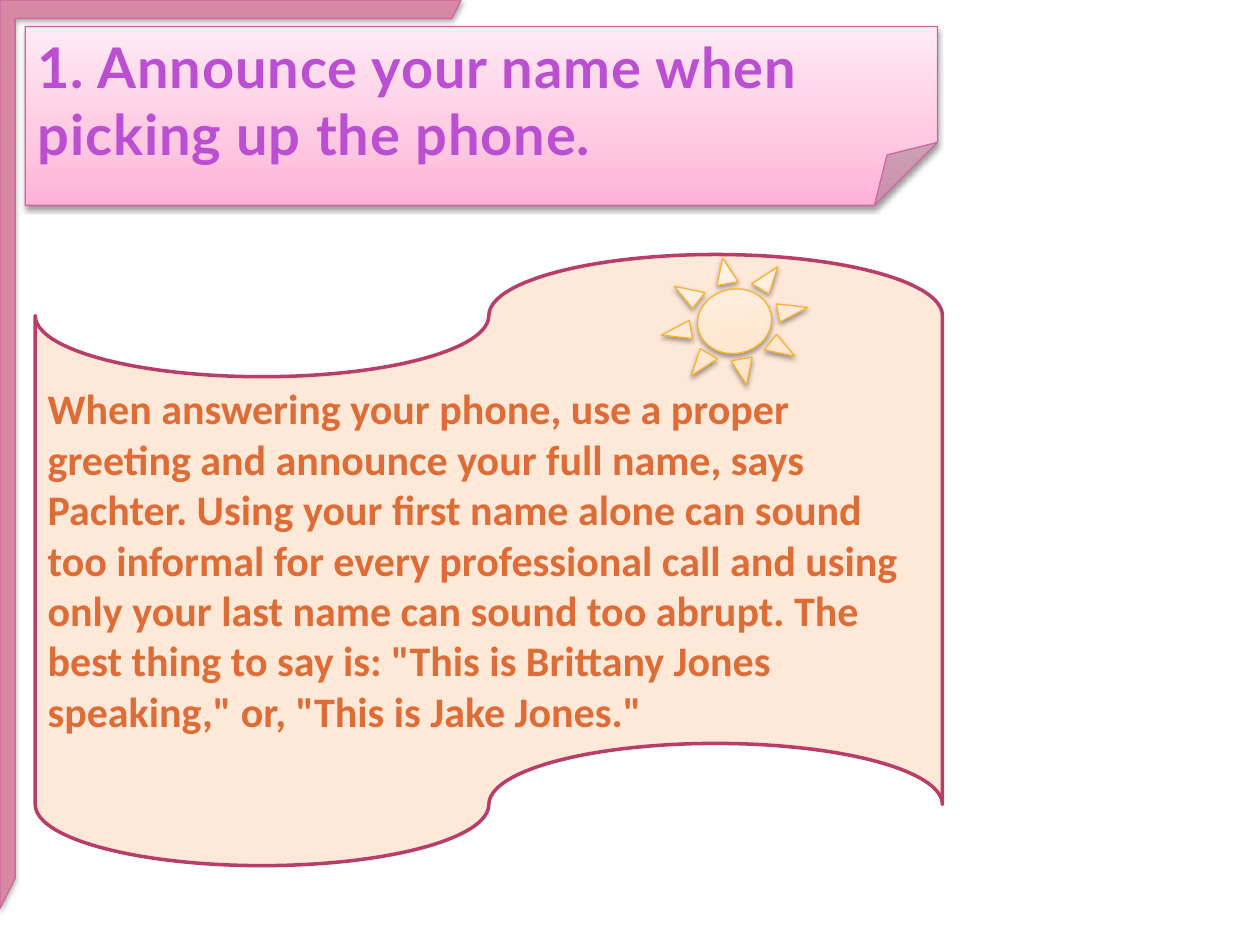
from dataclasses import dataclass, field

import pptx
import pptx.dml.color
import pptx.enum.shapes
import pptx.enum.text
import pptx.oxml
import pptx.oxml.ns
import pptx.util
from pptx.shapes.autoshape import Shape
from pptx.slide import Slide

SLIDE_WIDTH, SLIDE_HEIGHT = pptx.util.Inches(10), pptx.util.Inches(7.5)
PRESET = pptx.enum.shapes.MSO_SHAPE
NAMESPACE = pptx.oxml.ns.nsdecls("a")


@dataclass(frozen=True)
class Theme:
    pink_shades: tuple[str, ...] = ("FFB1D7", "FFC8E2", "FFEAF4")
    cream_shades: tuple[str, ...] = ("FFDEBC", "FFE7D0", "FFF6ED")
    shade_stops: tuple[int, ...] = (0, 35, 100)
    frame: str = "D788A3"
    pink_line: str = "CD68A1"
    sun_line: str = "F8B333"
    tape: str = "FEE8D8"
    tape_line: str = "B83D68"
    title: str = "BB4FD2"
    body: str = "DE6C36"
    title_font: str = "Lato"
    body_font: str = "Calibri"
    title_size: int = 32
    body_size: int = 24


THEME = Theme()


@dataclass(frozen=True)
class Panel:
    """A decorated shape; box holds left, top, width, height as shares of the slide."""
    preset: PRESET
    box: tuple[float, float, float, float]
    fill: str | tuple[str, ...]
    line: str
    line_width: float = 0.75
    adjustments: dict[str, int] = field(default_factory=dict)
    rotation: float = 0
    shadow: bool = True


TITLE_NOTE = Panel(PRESET.FOLDED_CORNER, (0.2 / 10, 0.21 / 7.5, 7.24 / 10, 1.42 / 7.5),
                   THEME.pink_shades, THEME.pink_line, adjustments={"adj": 35200})
ADVICE_TAPE = Panel(PRESET.FLOWCHART_PUNCHED_TAPE,
                    (0.28 / 10, 2.02 / 7.5, 7.2 / 10, 4.85 / 7.5),
                    THEME.tape, THEME.tape_line, line_width=2, shadow=False)
CORNER_FRAME = Panel(PRESET.HALF_FRAME, (0, 0, 3.66 / 10, 7.21 / 7.5),
                     THEME.frame, THEME.pink_line,
                     adjustments={"adj1": 4000, "adj2": 3300})
SUN = Panel(PRESET.SUN, (5.24 / 10, 2.04 / 7.5, 1.18 / 10, 1.02 / 7.5),
            THEME.cream_shades, THEME.sun_line, rotation=349.3)

TITLE = "1. Announce your name when picking up the phone."
ADVICE = (
    "When answering your phone, use a proper greeting and announce your full name, "
    "says Pachter. Using your first name alone can sound too informal for every "
    "professional call and using only your last name can sound too abrupt. "
    'The best thing to say is: "This is Brittany Jones speaking," or, '
    '"This is Jake Jones."'
)


def rgb(code: str) -> pptx.dml.color.RGBColor:
    return pptx.dml.color.RGBColor.from_string(code)


def set_adjustments(shape: Shape, adjustments: dict[str, int]) -> None:
    """Write the guides directly, as some presets list none in the library."""
    guides = shape._element.spPr.find(
        f'{pptx.oxml.ns.qn("a:prstGeom")}/{pptx.oxml.ns.qn("a:avLst")}')
    for guide in list(guides):
        guides.remove(guide)
    for name, value in adjustments.items():
        guides.append(pptx.oxml.parse_xml(
            f'<a:gd {NAMESPACE} name="{name}" fmla="val {value}"/>'))


def fill_with_shades(shape: Shape, shades: tuple[str, ...]) -> None:
    """Fill upwards from the first shade to the last."""
    stops = "".join(
        f'<a:gs pos="{stop * 1000}"><a:srgbClr val="{shade}"/></a:gs>'
        for stop, shade in zip(THEME.shade_stops, shades)
    )
    gradient = pptx.oxml.parse_xml(
        f'<a:gradFill {NAMESPACE} rotWithShape="1"><a:gsLst>{stops}</a:gsLst>'
        '<a:lin ang="16200000" scaled="0"/></a:gradFill>'
    )
    shape._element.spPr.find(pptx.oxml.ns.qn("a:prstGeom")).addnext(gradient)


def add_drop_shadow(shape: Shape) -> None:
    effects = shape._element.spPr.find(pptx.oxml.ns.qn("a:effectLst"))
    effects.append(pptx.oxml.parse_xml(
        f'<a:outerShdw {NAMESPACE} blurRad="{pptx.util.Pt(3.1)}" '
        f'dist="{pptx.util.Pt(1.6)}" dir="5400000" rotWithShape="0">'
        '<a:srgbClr val="000000"><a:alpha val="38000"/></a:srgbClr></a:outerShdw>'
    ))


def add_panel(slide: Slide, panel: Panel) -> Shape:
    left, top, width, height = panel.box
    shape = slide.shapes.add_shape(
        panel.preset, round(left * SLIDE_WIDTH), round(top * SLIDE_HEIGHT),
        round(width * SLIDE_WIDTH), round(height * SLIDE_HEIGHT))
    if panel.adjustments:
        set_adjustments(shape, panel.adjustments)
    shape.rotation = panel.rotation
    if isinstance(panel.fill, str):
        shape.fill.solid()
        shape.fill.fore_color.rgb = rgb(panel.fill)
    else:
        fill_with_shades(shape, panel.fill)
    shape.line.color.rgb = rgb(panel.line)
    shape.line.width = pptx.util.Pt(panel.line_width)
    shape.shadow.inherit = False
    if panel.shadow:
        add_drop_shadow(shape)
    return shape


def write(shape: Shape, text: str, font_name: str, size: int, color: str) -> None:
    frame = shape.text_frame
    frame.text = text
    frame.word_wrap = True
    frame.auto_size = pptx.enum.text.MSO_AUTO_SIZE.SHAPE_TO_FIT_TEXT
    frame.vertical_anchor = pptx.enum.text.MSO_ANCHOR.TOP
    paragraph = frame.paragraphs[0]
    paragraph.alignment = pptx.enum.text.PP_ALIGN.LEFT
    font = paragraph.runs[0].font
    font.name = font_name
    font.size = pptx.util.Pt(size)
    font.bold = True
    font.color.rgb = rgb(color)


def main() -> None:
    presentation = pptx.Presentation()
    presentation.slide_width, presentation.slide_height = SLIDE_WIDTH, SLIDE_HEIGHT
    slide = presentation.slides.add_slide(presentation.slide_layouts[6])

    title_note = add_panel(slide, TITLE_NOTE)
    write(title_note, TITLE, THEME.title_font, THEME.title_size, THEME.title)
    title_run = title_note.text_frame.paragraphs[0].runs[0]
    title_run.font._element.set("spc", "50")

    advice_tape = add_panel(slide, ADVICE_TAPE)
    write(advice_tape, ADVICE, THEME.body_font, THEME.body_size, THEME.body)

    add_panel(slide, CORNER_FRAME)
    add_panel(slide, SUN)
    presentation.save("out.pptx")


if __name__ == "__main__":
    main()
